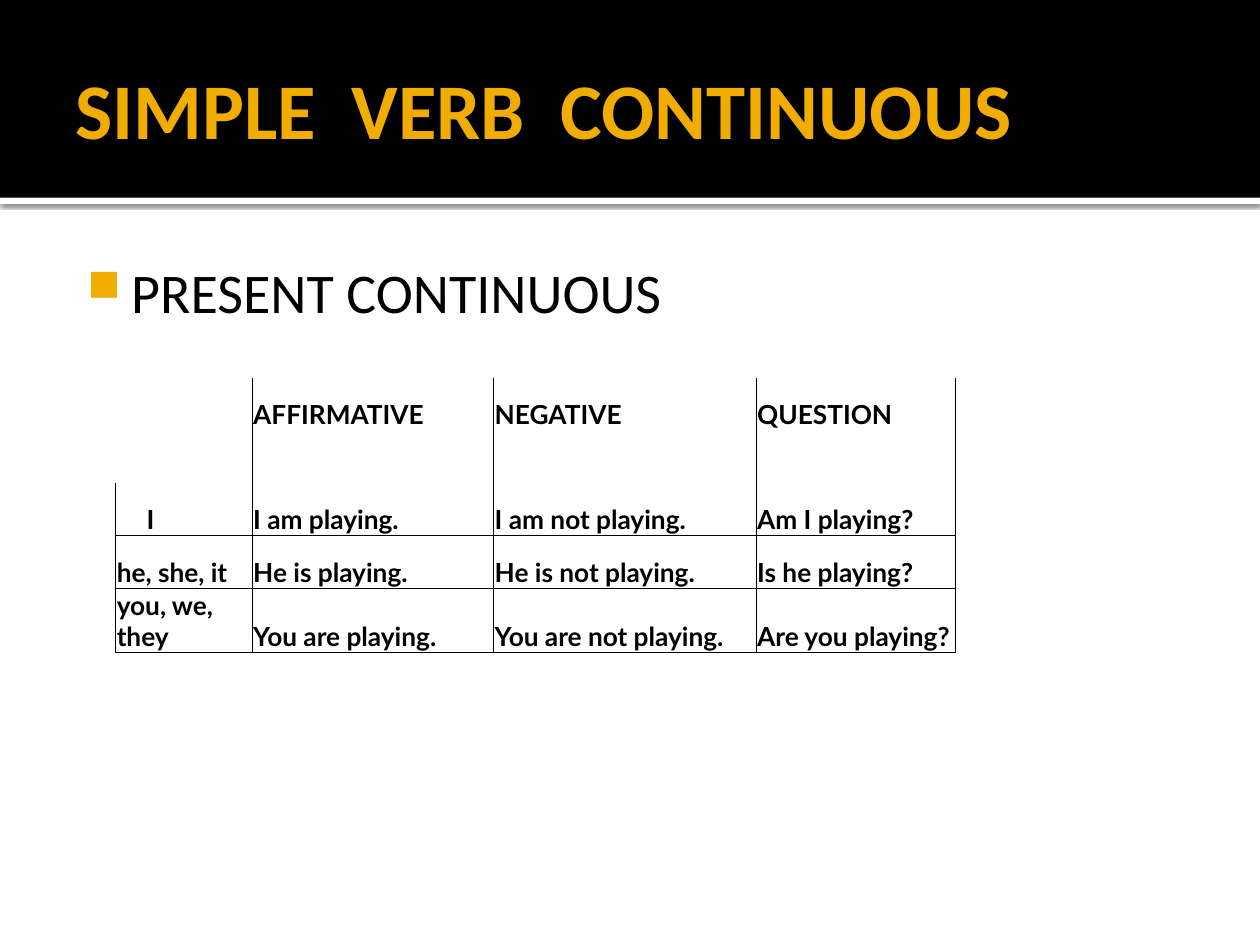
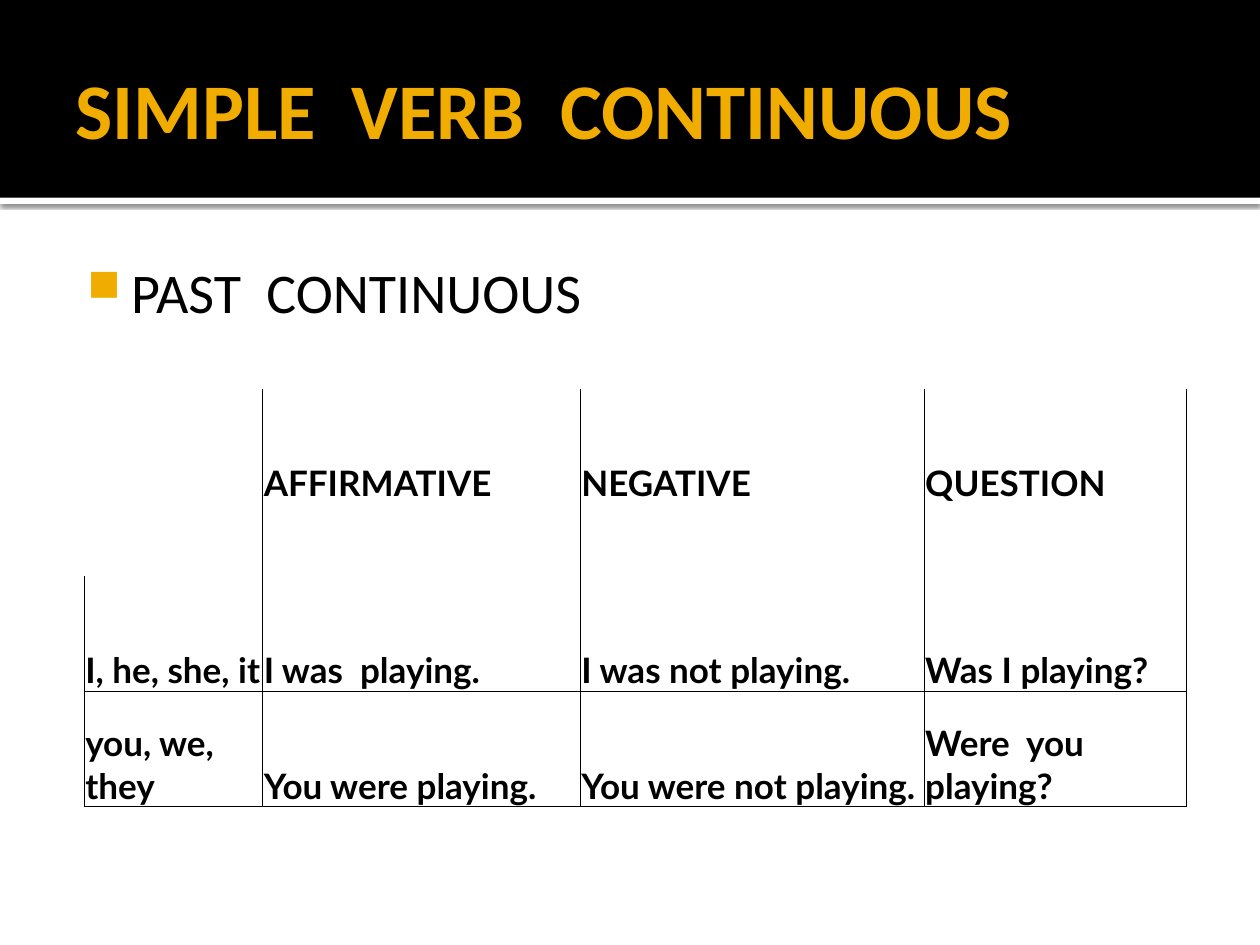
from lxml import etree
from pptx import Presentation
from pptx.dml.color import RGBColor
from pptx.enum import shapes, text
from pptx.oxml import ns
from pptx.util import Pt

BLACK = RGBColor(0x00, 0x00, 0x00)
WHITE = RGBColor(0xFF, 0xFF, 0xFF)
AMBER = RGBColor(0xF0, 0xAD, 0x00)

TITLE = "SIMPLE  VERB  CONTINUOUS"
HEADER = ("", "AFFIRMATIVE", "NEGATIVE", "QUESTION")
SPACER = ("",) * 4
HEADING_ROWS = 2  # the header and the spacer below it

TENSES = [
    {
        "heading": "PRESENT CONTINUOUS",
        "rows": [
            HEADER,
            SPACER,
            ("I", "I am playing.", "I am not playing.", "Am I playing?"),
            ("he, she, it", "He is playing.", "He is not playing.", "Is he playing?"),
            ("you, we, they", "You are playing.", "You are not playing.", "Are you playing?"),
        ],
        "position": (66, 216),
        "widths": (78, 138, 150, 114),
        "heights": (30,) * 5,
        "size": 15,
        "indents": {"I": 17},
    },
    {
        "heading": "PAST  CONTINUOUS",
        "rows": [
            HEADER,
            SPACER,
            ("I, he, she, it", "I was  playing.", "I was not playing.", "Was I playing?"),
            ("you, we, they", "You were playing.", "You were not playing.", "Were  you playing?"),
        ],
        "position": (48, 222),
        "widths": (102, 181.5, 196.5, 150),
        "heights": (66, 41, 66, 66),
        "size": 20,
        "indents": {},
    },
]

SLIDE_WIDTH, SLIDE_HEIGHT = 720, 540
BAND_HEIGHT, RULE_HEIGHT = 113, 3.6
NO_STYLE = "{2D5ABB26-0587-4C30-8999-92F81FD0307C}"


def add_element(parent, tag, **attributes):
    element = etree.SubElement(parent, ns.qn(tag))
    for name, value in attributes.items():
        element.set(name, str(value))
    return element


def set_insets(frame, left, top, right, bottom):
    frame.margin_left, frame.margin_top = Pt(left), Pt(top)
    frame.margin_right, frame.margin_bottom = Pt(right), Pt(bottom)


def style_font(paragraph, name, size, color, bold=False):
    for run in paragraph.runs:
        run.font.name, run.font.size = name, Pt(size)
        run.font.bold, run.font.color.rgb = bold, color


def add_bar(slide, top, height, color):
    bar = slide.shapes.add_shape(
        shapes.MSO_SHAPE.RECTANGLE, 0, Pt(top), Pt(SLIDE_WIDTH), Pt(height))
    bar.fill.solid()
    bar.fill.fore_color.rgb = color
    bar.line.fill.background()
    bar.shadow.inherit = False
    return bar


def add_title_band(slide, layout):
    """Draw the band and its shadowed rule, then move them to the layout."""
    band = add_bar(slide, 0, BAND_HEIGHT, BLACK)
    rule = add_bar(slide, BAND_HEIGHT, RULE_HEIGHT, WHITE)
    effects = rule.element.spPr.find(ns.qn("a:effectLst"))
    shadow = add_element(effects, "a:outerShdw", blurRad=Pt(2.5), dist=Pt(0.8),
                         dir=90 * 60000, algn="t", rotWithShape=0)
    shadow_color = add_element(shadow, "a:srgbClr", val=BLACK)
    add_element(shadow_color, "a:alpha", val=60000)
    for bar in (band, rule):
        layout.shapes.element.insert(2, bar.element)


def set_title(slide):
    title = slide.shapes.title
    title.left, title.top, title.width, title.height = Pt(36), Pt(12), Pt(648), Pt(99)
    frame = title.text_frame
    frame.text = TITLE
    frame.vertical_anchor = text.MSO_ANCHOR.MIDDLE
    set_insets(frame, 7.2, 3.6, 3.6, 3.6)
    frame.paragraphs[0].alignment = text.PP_ALIGN.LEFT
    style_font(frame.paragraphs[0], "Calibri", 45, AMBER, bold=True)


def add_heading(slide, heading):
    box = slide.shapes.add_textbox(Pt(36), Pt(140), Pt(648), Pt(364))
    frame = box.text_frame
    frame.word_wrap = True
    set_insets(frame, 4.5, 7.2, 7.2, 3.6)
    paragraph = frame.paragraphs[0]
    paragraph.text = heading
    properties = paragraph._p.get_or_add_pPr()
    properties.set("marL", str(Pt(34.5)))
    properties.set("indent", str(-Pt(25)))
    bullet_color = add_element(properties, "a:buClr")
    add_element(bullet_color, "a:srgbClr", val=AMBER)
    add_element(properties, "a:buSzPct", val=80000)
    add_element(properties, "a:buChar", char="■")
    style_font(paragraph, "Calibri", 32, BLACK)


def set_borders(cell, sides):
    """Draw thin lines on the given sides, out of L, R, T and B."""
    properties = cell._tc.get_or_add_tcPr()
    for index, side in enumerate("LRTB"):
        line = add_element(properties, f"a:ln{side}", w=Pt(0.5))
        properties.insert(index, line)
        if side in sides:
            fill = add_element(line, "a:solidFill")
            add_element(fill, "a:srgbClr", val=BLACK)
        else:
            add_element(line, "a:noFill")


def border_sides(row, column):
    """Leave the corner open at the left and the heading rows without lines across."""
    sides = "R"
    if column > 0 or row >= HEADING_ROWS:
        sides += "L"
    if row >= HEADING_ROWS:
        sides += "B"
    if row > HEADING_ROWS:
        sides += "T"
    return sides


def add_verb_table(slide, tense):
    rows, widths, heights = tense["rows"], tense["widths"], tense["heights"]
    left, top = tense["position"]
    frame = slide.shapes.add_table(len(rows), len(widths), Pt(left), Pt(top),
                                   Pt(sum(widths)), Pt(sum(heights)))
    table = frame.table
    table.first_row = table.horz_banding = False
    table._tbl.tblPr.find(ns.qn("a:tableStyleId")).text = NO_STYLE
    for column, width in zip(table.columns, widths):
        column.width = Pt(width)
    for row, height in zip(table.rows, heights):
        row.height = Pt(height)
    for row_index, words in enumerate(rows):
        for column_index, phrase in enumerate(words):
            cell = table.cell(row_index, column_index)
            cell.fill.background()
            cell.vertical_anchor = text.MSO_ANCHOR.BOTTOM
            set_insets(cell, 0.75, 0.75, 0.75, 0)
            set_borders(cell, border_sides(row_index, column_index))
            paragraph = cell.text_frame.paragraphs[0]
            if phrase:
                paragraph.text = phrase
                style_font(paragraph, "Lato", tense["size"], BLACK, bold=True)
            if phrase in tense["indents"]:
                indent = Pt(tense["indents"][phrase])
                paragraph._p.get_or_add_pPr().set("marL", str(indent))


def main():
    presentation = Presentation()
    presentation.slide_width, presentation.slide_height = Pt(SLIDE_WIDTH), Pt(SLIDE_HEIGHT)
    layout = presentation.slide_layouts.get_by_name("Title Only")
    for index, tense in enumerate(TENSES):
        slide = presentation.slides.add_slide(layout)
        if index == 0:
            add_title_band(slide, layout)
        set_title(slide)
        add_heading(slide, tense["heading"])
        add_verb_table(slide, tense)
    presentation.save("out.pptx")


if __name__ == "__main__":
    main()
